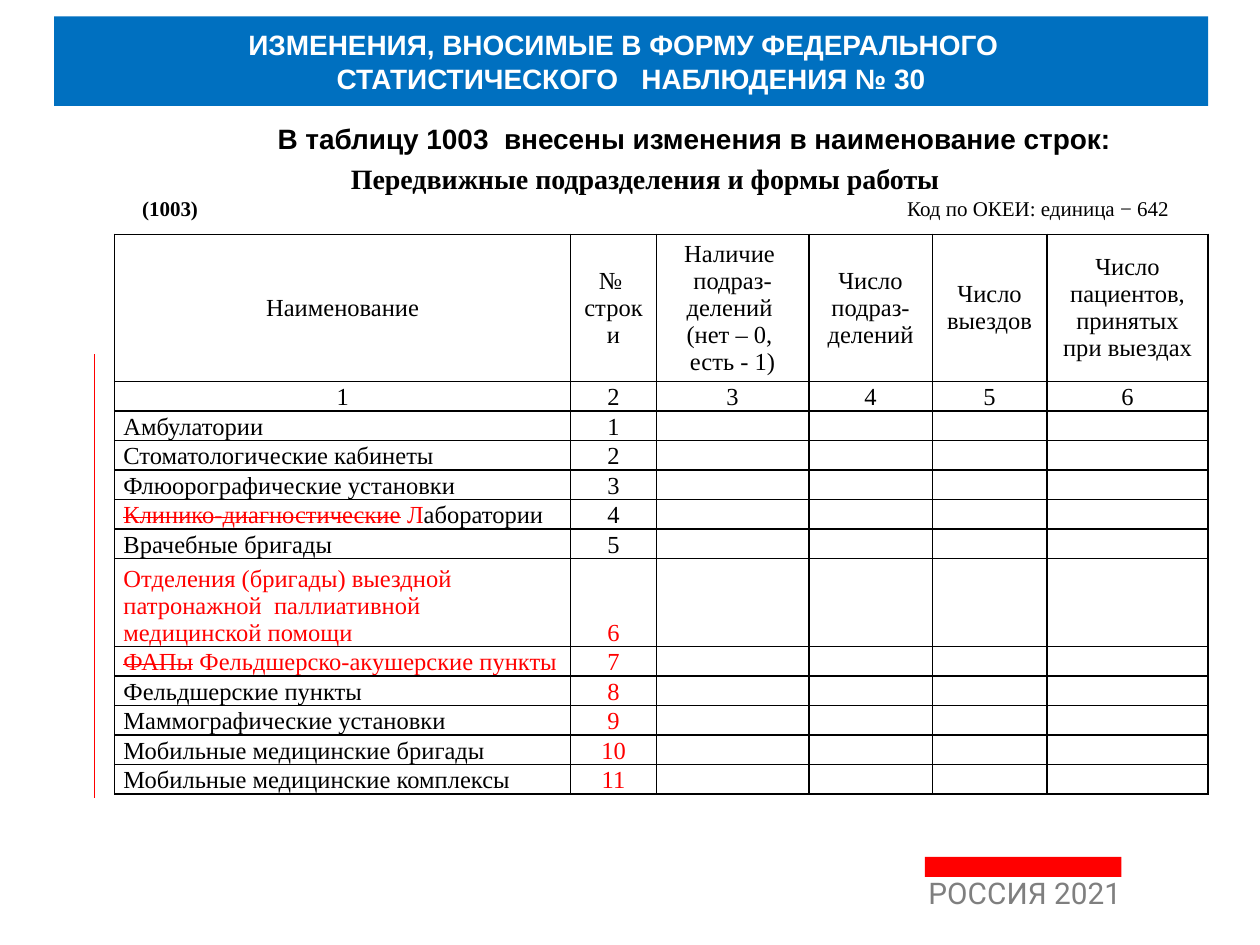
from pptx import Presentation
from pptx import util as u
from pptx.dml.color import RGBColor
from pptx.enum import shapes, text
from pptx.oxml.ns import qn
from lxml import etree

BLACK = RGBColor(0, 0, 0)
WHITE = RGBColor(255, 255, 255)
RED = RGBColor(255, 0, 0)
BLUE = RGBColor(0x00, 0x70, 0xC0)
GREY = RGBColor(0x7F, 0x7F, 0x7F)
SERIF = "Times New Roman"
CENTER, LEFT = text.PP_ALIGN.CENTER, text.PP_ALIGN.LEFT
MIDDLE, BOTTOM = text.MSO_ANCHOR.MIDDLE, text.MSO_ANCHOR.BOTTOM


def style(p, name, size, color, bold=False, align=LEFT):
    p.font.name, p.font.size, p.font.bold = name, u.Pt(size), bold
    p.font.color.rgb = color
    p.alignment = align


def add_bar(slide, color, *box):
    sp = slide.shapes.add_shape(shapes.MSO_SHAPE.RECTANGLE, *map(u.Inches, box))
    sp.shadow.inherit = False
    sp.fill.solid()
    sp.fill.fore_color.rgb = color
    sp.line.fill.background()
    return sp


prs = Presentation()
prs.slide_width, prs.slide_height = u.Inches(10), u.Inches(7.5)
s = prs.slides.add_slide(prs.slide_layouts[6])

# Footer: caption under a red bar
tf = s.shapes.add_textbox(*map(u.Inches, (7.27, 6.95, 1.88, 0.47))).text_frame
tf.word_wrap = True
p = tf.paragraphs[0]
p.text = "РОССИЯ 2021"
p.line_spacing, p.space_before = 0.8, u.Pt(3.4)
style(p, "Roboto", 17, GREY)
add_bar(s, RED, 7.34, 6.8, 1.56, 0.16)

# Red change mark beside the table
line = s.shapes.add_connector(shapes.MSO_CONNECTOR.STRAIGHT,
                              *map(u.Inches, (0.75, 2.81, 0.75, 6.33)))
line.line.color.rgb, line.line.width = RED, u.Pt(0.75)
etree.SubElement(line._element.spPr, qn("a:effectLst"))

# Title banner
tf = add_bar(s, BLUE, 0.43, 0.13, 9.16, 0.71).text_frame
tf.vertical_anchor = MIDDLE
tf.text = "ИЗМЕНЕНИЯ, ВНОСИМЫЕ В ФОРМУ ФЕДЕРАЛЬНОГО  \nСТАТИСТИЧЕСКОГО   НАБЛЮДЕНИЯ № 30"
for p in tf.paragraphs:
    style(p, "Arial", 16, WHITE, True, CENTER)

# Heading
tf = s.shapes.add_textbox(*map(u.Inches, (1.02, 0.94, 8.98, 0.32))).text_frame
tf.vertical_anchor, tf.word_wrap = MIDDLE, True
p = tf.paragraphs[0]
p.text = "В таблицу 1003  внесены изменения в наименование строк:"
style(p, "Arial", 16, BLACK, True, CENTER)

# Table content: a name is made of (text, colour, struck out) pieces
HEADERS = ["Наименование", "№ \vстроки",
           "Наличие \nподраз-делений \v(нет – 0, \nесть - 1)",
           "Число\nподраз-делений", "Число выездов",
           "Число пациентов, принятых при выездах"]
NAMES = [
    [("Амбулатории", BLACK, False)],
    [("Стоматологические кабинеты", BLACK, False)],
    [("Флюорографические установки", BLACK, False)],
    [("Клинико-диагностические", RED, True), (" Л", RED, False),
     ("аборатории", BLACK, False)],
    [("Врачебные бригады", BLACK, False)],
    [("Отделения (бригады) выездной патронажной  паллиативной медицинской помощи",
      RED, False)],
    [("ФАПы", RED, True), (" Фельдшерско-акушерские пункты", RED, False)],
    [("Фельдшерские пункты", BLACK, False)],
    [("Маммографические установки", BLACK, False)],
    [("Мобильные медицинские бригады", BLACK, False)],
    [("Мобильные медицинские комплексы", BLACK, False)],
]
FIRST_CHANGED = 6
COLS = [3.62, 0.68, 1.21, 0.98, 0.91, 1.28]
ROW = 0.216
ROWS = [5 * ROW] + [ROW] * 6 + [3 * ROW] + [ROW] * 5

# Table grid
frame = s.shapes.add_table(len(ROWS), len(COLS), u.Inches(0.91), u.Inches(1.86),
                           u.Inches(sum(COLS)), u.Inches(sum(ROWS)))
tbl = frame.table
tbl.first_row = tbl.horz_banding = False
for col, w in zip(tbl.columns, COLS):
    col.width = u.Inches(w)
for row, h in zip(tbl.rows, ROWS):
    row.height = u.Inches(h)

# Table cells
for i, row in enumerate(tbl.rows):
    number = i - 1
    for j, cell in enumerate(row.cells):
        tf, color, align = cell.text_frame, BLACK, CENTER
        cell.margin_left = cell.margin_right = u.Inches(0.07 if i > 1 or j == 5 else 0.06)
        cell.margin_top = cell.margin_bottom = 0
        cell.vertical_anchor = BOTTOM if i else MIDDLE
        if i == 0:
            tf.text = HEADERS[j]
        elif i == 1:
            tf.text = str(j + 1)
        elif j == 0:
            align = LEFT
            for piece, piece_color, struck in NAMES[number - 1]:
                r = tf.paragraphs[0].add_run()
                r.text = piece
                r.font.color.rgb = piece_color
                if struck:
                    r.font._element.set("strike", "sngStrike")
        elif j == 1:
            tf.text = str(number)
            color = RED if number >= FIRST_CHANGED else BLACK
        for p in tf.paragraphs:
            style(p, SERIF, 14, color, False, align)
        if not tf.text:
            end = etree.SubElement(tf.paragraphs[0]._p, qn("a:endParaRPr"))
            end.set("sz", "1200")
        tcPr = cell._tc.get_or_add_tcPr()
        for side in ("lnL", "lnR", "lnT", "lnB"):
            ln = etree.SubElement(tcPr, qn("a:" + side), w=str(u.Pt(1)))
            fill = etree.SubElement(ln, qn("a:solidFill"))
            etree.SubElement(fill, qn("a:srgbClr"), val=str(BLACK))
        cell.fill.background()

# Table caption; the code is set flush right by a tab stop
tf = s.shapes.add_textbox(*map(u.Inches, (0.75, 1.23, 8.74, 0.57))).text_frame
tf.word_wrap, tf.vertical_anchor = True, MIDDLE
p = tf.paragraphs[0]
p.text = "Передвижные подразделения и формы работы"
style(p, SERIF, 16, BLACK, True, CENTER)
p = tf.add_paragraph()
for piece, bold in (("\t(1003)\t", True), ("Код по ОКЕИ: единица − 642", False)):
    r = p.add_run()
    r.text, r.font.bold = piece, bold
style(p, SERIF, 12, BLACK)
tabs = etree.SubElement(p._p.get_or_add_pPr(), qn("a:tabLst"))
for pos, algn in ((0.28, "l"), (8.43, "r")):
    etree.SubElement(tabs, qn("a:tab"), pos=str(u.Inches(pos)), algn=algn)
pPr = p._p.pPr
pPr.insert(0, tabs)

prs.save("out.pptx")
